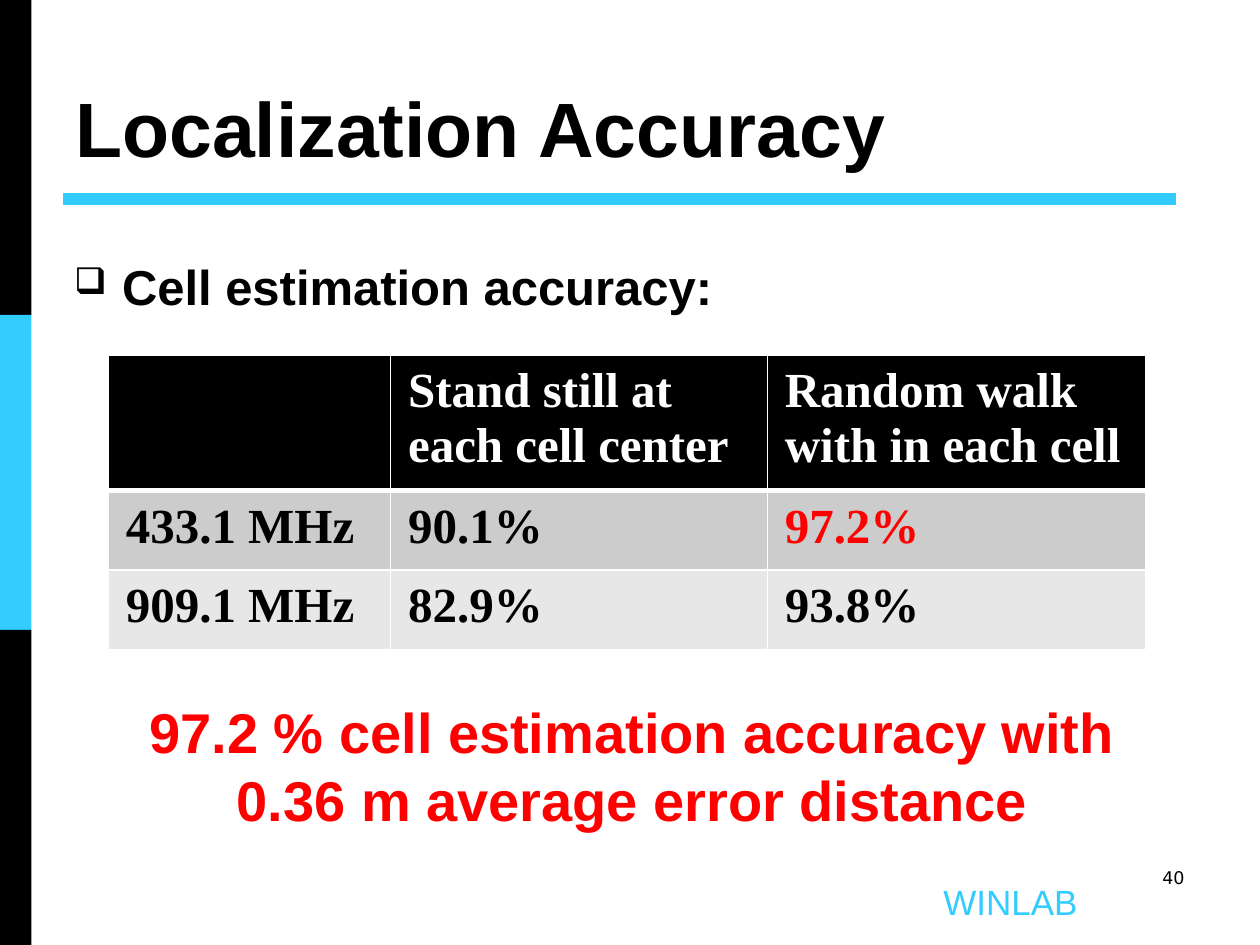
from dataclasses import dataclass

from lxml import etree
from pptx import Presentation
from pptx.dml.color import RGBColor
from pptx.enum.shapes import MSO_CONNECTOR, MSO_SHAPE
from pptx.enum.text import MSO_ANCHOR as Anchor, PP_ALIGN as Align
from pptx.oxml.ns import qn
from pptx.util import Inches, Pt

BLACK, WHITE, CYAN, RED = "000000", "FFFFFF", "33CCFF", "FF0000"
HEADER_ROW, DARK_ROW, LIGHT_ROW = BLACK, "CCCCCC", "E7E7E7"


@dataclass
class Style:
    size: float
    color: str = BLACK
    font: str = "Arial"
    bold: bool = False


@dataclass
class Box:
    left: float
    top: float
    width: float
    height: float

    def lengths(self) -> tuple:
        return tuple(Inches(v) for v in (self.left, self.top, self.width, self.height))


def rgb(color: str) -> RGBColor:
    return RGBColor.from_string(color)


def write(frame, text: str, style: Style, align=Align.LEFT):
    """Put one styled run in the first paragraph and return the paragraph."""
    frame.word_wrap = True
    paragraph = frame.paragraphs[0]
    paragraph.alignment = align
    run = paragraph.add_run()
    run.text = text
    run.font.size = Pt(style.size)
    run.font.name = style.font
    run.font.bold = style.bold
    run.font.color.rgb = rgb(style.color)
    return paragraph


def add_text(slide, box: Box, text: str, style: Style, align=Align.LEFT, anchor=Anchor.TOP):
    frame = slide.shapes.add_textbox(*box.lengths()).text_frame
    frame.vertical_anchor = anchor
    return write(frame, text, style, align)


def add_block(slide, box: Box, color: str):
    block = slide.shapes.add_shape(MSO_SHAPE.RECTANGLE, *box.lengths())
    block.shadow.inherit = False
    block.fill.solid()
    block.fill.fore_color.rgb = rgb(color)
    block.line.fill.background()
    return block


def add_bullet(paragraph, char: str, color: str, percent: int, indent: float) -> None:
    props = paragraph._p.get_or_add_pPr()
    props.set("marL", str(Inches(indent)))
    props.set("indent", str(-Inches(indent)))
    bullet_color = etree.SubElement(props, qn("a:buClr"))
    etree.SubElement(bullet_color, qn("a:srgbClr"), val=color)
    etree.SubElement(props, qn("a:buSzPct"), val=str(percent * 1000))
    etree.SubElement(props, qn("a:buChar"), char=char)


def set_borders(cell, color: str, top: float, bottom: float) -> None:
    props = cell._tc.get_or_add_tcPr()
    widths = {"a:lnL": 1, "a:lnR": 1, "a:lnT": top, "a:lnB": bottom}
    for position, (side, width) in enumerate(widths.items()):
        border = etree.Element(qn(side), w=str(Pt(width)))
        fill = etree.SubElement(border, qn("a:solidFill"))
        etree.SubElement(fill, qn("a:srgbClr"), val=color)
        props.insert(position, border)


def fill_cell(cell, text: str, text_color: str, fill: str, top: float, bottom: float) -> None:
    cell.fill.solid()
    cell.fill.fore_color.rgb = rgb(fill)
    set_borders(cell, WHITE, top, bottom)
    cell.margin_left = cell.margin_right = Inches(0.14)
    cell.margin_top = cell.margin_bottom = Inches(0.07)
    if text:
        write(cell.text_frame, text, Style(28, text_color, "Times New Roman", True))


def add_accuracy_table(slide) -> None:
    rows = [
        ("", "Stand still at each cell center", "Random walk with in each cell"),
        ("433.1 MHz", "90.1%", "97.2%"),
        ("909.1 MHz", "82.9%", "93.8%"),
    ]
    fills = [HEADER_ROW, DARK_ROW, LIGHT_ROW]
    heights = [1, 0.63, 0.63]
    widths = [2.24, 2.99, 3]
    best = "97.2%"

    box = Box(0.86, 2.82, sum(widths), sum(heights))
    table = slide.shapes.add_table(len(rows), len(widths), *box.lengths()).table
    for column, width in zip(table.columns, widths):
        column.width = Inches(width)
    for r, values in enumerate(rows):
        table.rows[r].height = Inches(heights[r])
        for c, value in enumerate(values):
            color = WHITE if r == 0 else RED if value == best else BLACK
            fill_cell(table.cell(r, c), value, color, fills[r],
                      top=3 if r == 1 else 1, bottom=3 if r == 0 else 1)


def main() -> None:
    deck = Presentation()
    deck.slide_width, deck.slide_height = Inches(10), Inches(7.5)
    slide = deck.slides.add_slide(deck.slide_layouts[6])

    # Side band
    for i, color in enumerate((BLACK, CYAN, BLACK)):
        add_block(slide, Box(0, 2.5 * i, 0.25, 2.5), color)

    # Rule under the title
    rule = slide.shapes.add_connector(
        MSO_CONNECTOR.STRAIGHT, Inches(0.5), Inches(1.58), Inches(9.33), Inches(1.58))
    rule.line.color.rgb = rgb(CYAN)
    rule.line.width = Pt(7)
    etree.SubElement(rule._element.spPr, qn("a:effectLst"))

    # Footer
    add_text(slide, Box(7.35, 6.94, 1.34, 0.43), "WINLAB", Style(20, CYAN), Align.CENTER)
    add_text(slide, Box(7.17, 6.83, 2.33, 0.5), "40",
             Style(10, font="DejaVu Sans"), Align.RIGHT)

    # Title and bullet
    add_text(slide, Box(0.5, 0.17, 9, 1.25), "Localization Accuracy",
             Style(44, bold=True), anchor=Anchor.BOTTOM)
    topic = add_text(slide, Box(0.49, 1.75, 9.01, 4.95), "Cell estimation accuracy:",
                     Style(28, bold=True))
    topic.line_spacing = 1.5
    add_bullet(topic, "❑", BLACK, percent=75, indent=0.38)

    add_accuracy_table(slide)

    # Conclusion
    conclusion = add_block(slide, Box(0.92, 5.49, 8.2, 1.18), WHITE)
    conclusion.line.color.rgb = rgb(WHITE)
    conclusion.line.width = Pt(2)
    conclusion.text_frame.vertical_anchor = Anchor.TOP
    write(conclusion.text_frame,
          "97.2 % cell estimation accuracy with 0.36 m average error distance",
          Style(32, RED, bold=True), Align.CENTER)

    deck.save("out.pptx")


if __name__ == "__main__":
    main()
